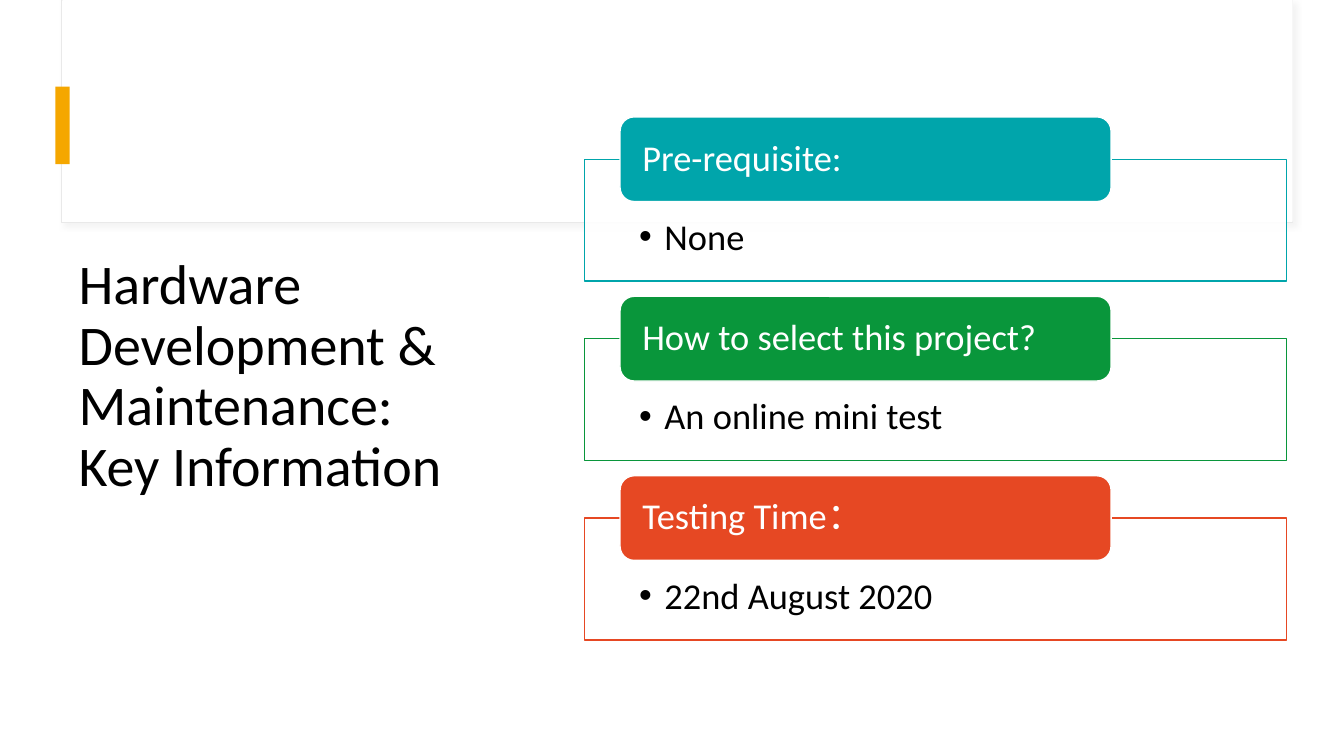
from lxml import etree
from pptx import Presentation, util as u
from pptx.dml import color
from pptx.enum import shapes, text
from pptx.oxml import ns

PX = 9144
FONT = "Calibri"
COLORS = {
    "white": "FFFFFF",
    "black": "000000",
    "frame": "E9E9E9",
    "shadow": "D9D9D9",
    "accent": "F5A700",
    "teal": "00A5AB",
    "green": "09963B",
    "orange": "E64823",
}
CARDS = [
    ("Pre-requisite:", "None", "teal"),
    ("How to select this project?", "An online mini test", "green"),
    ("Testing Time：", "22nd August 2020", "orange"),
]
CARD_TOP = 116
CARD_PITCH = 178


def px(length):
    return u.Emu(length * PX)


def rgb(name):
    return color.RGBColor.from_string(COLORS[name])


def add_child(parent, tag, **attributes):
    return etree.SubElement(parent, ns.qn(tag), **attributes)


def add_box(slide, box, fill, line=None, width=1, kind=shapes.MSO_SHAPE.RECTANGLE):
    shape = slide.shapes.add_shape(kind, *map(px, box))
    shape.shadow.inherit = False
    shape.fill.solid()
    shape.fill.fore_color.rgb = rgb(fill)
    if line:
        shape.line.color.rgb = rgb(line)
        shape.line.width = u.Pt(width)
    else:
        shape.line.fill.background()
    return shape


def set_frame(shape, insets, anchor):
    frame = shape.text_frame
    frame.word_wrap = True
    frame.auto_size = text.MSO_AUTO_SIZE.NONE
    frame.vertical_anchor = anchor
    frame.margin_left, frame.margin_top, frame.margin_right, frame.margin_bottom = map(px, insets)
    paragraph = frame.paragraphs[0]
    paragraph.alignment = text.PP_ALIGN.LEFT
    paragraph.line_spacing = 0.9
    return paragraph


def add_run(paragraph, words, size, name):
    run = paragraph.add_run()
    run.text = words
    run.font.size = u.Pt(size)
    run.font.name = FONT
    run.font.color.rgb = rgb(name)


def add_bullet(paragraph):
    properties = paragraph._p.get_or_add_pPr()
    properties.set("marL", str(px(25)))
    properties.set("indent", str(px(-25)))
    add_child(properties, "a:buFont", typeface="Arial")
    add_child(properties, "a:buChar", char="•")


def set_opacity(shape, percent):
    fill_color = shape._element.spPr.find(ns.qn("a:solidFill"))[0]
    add_child(fill_color, "a:alpha", val=str(percent * 1000))


def add_shadow(shape):
    effects = shape._element.spPr.find(ns.qn("a:effectLst"))
    shadow = add_child(effects, "a:outerShdw", blurRad=str(u.Pt(4)), dist=str(u.Pt(3)),
                       dir="2700000", algn="tl", rotWithShape="0")
    shadow_color = add_child(shadow, "a:srgbClr", val=COLORS["shadow"])
    add_child(shadow_color, "a:alpha", val="30000")


def add_backdrop(slide):
    add_shadow(add_box(slide, (61, 0, 1221, 221), "white", "frame", 0.75))
    add_box(slide, (62, 0, 1220, 220), "white")
    add_box(slide, (55, 86, 14, 77), "accent")


def set_title(slide):
    title = slide.shapes.title
    title.left, title.top, title.width, title.height = map(px, (68, 127, 422, 495))
    paragraph = set_frame(title, (10, 5, 10, 5), text.MSO_ANCHOR.MIDDLE)
    add_run(paragraph, "Hardware Development & Maintenance:", 40, "black")
    paragraph.add_line_break()
    add_run(paragraph, "Key Information", 40, "black")


def add_card(slide, top, heading, detail, accent):
    body = add_box(slide, (580, top + 42, 696, 121), "white", accent)
    set_opacity(body, 90)
    paragraph = set_frame(body, (54, 59, 54, 20), text.MSO_ANCHOR.TOP)
    add_bullet(paragraph)
    add_run(paragraph, detail, 26, "black")
    header = add_box(slide, (615, top, 487, 84), accent, "white",
                     kind=shapes.MSO_SHAPE.ROUNDED_RECTANGLE)
    paragraph = set_frame(header, (18, 0, 18, 0), text.MSO_ANCHOR.MIDDLE)
    add_run(paragraph, heading, 26, "white")


def main():
    presentation = Presentation()
    presentation.slide_width = px(1333)
    presentation.slide_height = px(750)
    slide = presentation.slides.add_slide(presentation.slide_layouts[5])
    add_backdrop(slide)
    set_title(slide)
    for index, card in enumerate(CARDS):
        add_card(slide, CARD_TOP + index * CARD_PITCH, *card)
    presentation.save("out.pptx")


if __name__ == "__main__":
    main()
